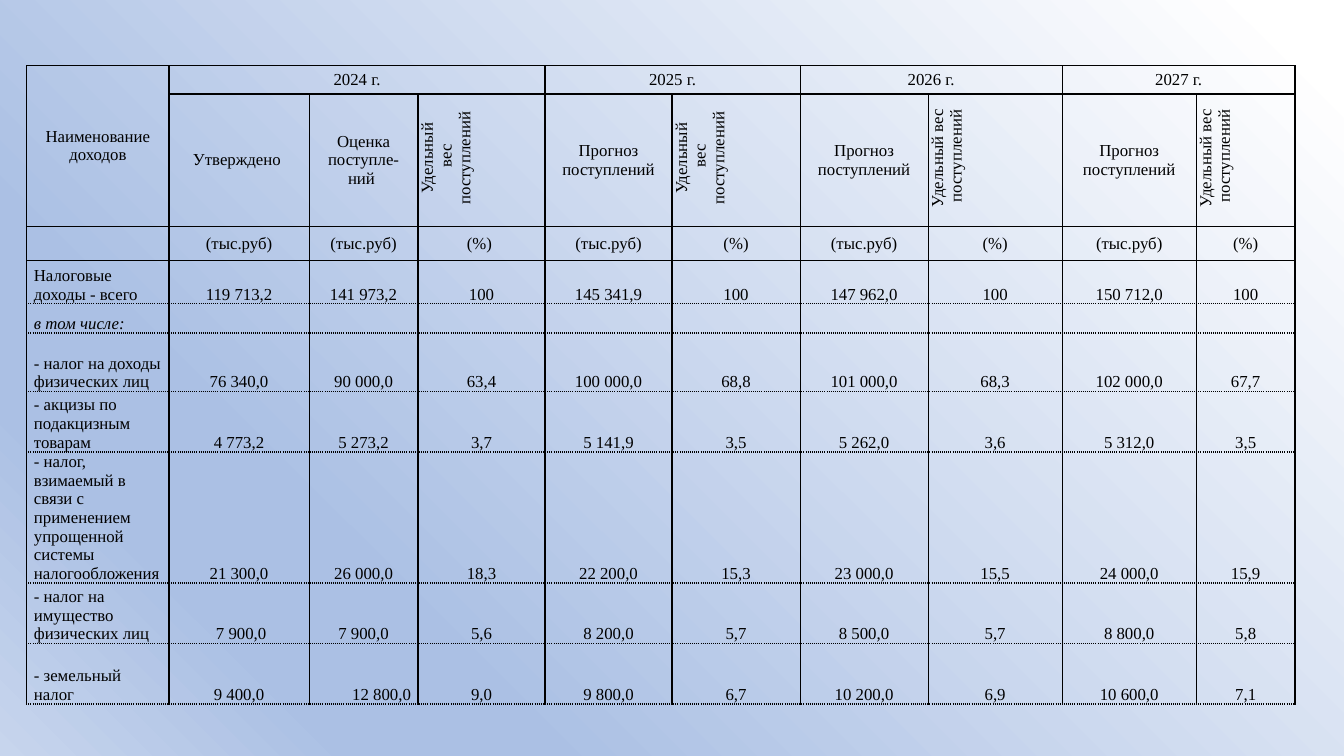
from dataclasses import dataclass, field

import lxml.etree
import pptx
import pptx.dml.color
import pptx.enum.text
import pptx.oxml
import pptx.oxml.ns
import pptx.util

ALIGN = pptx.enum.text.PP_ALIGN
ANCHOR = pptx.enum.text.MSO_ANCHOR
qn = pptx.oxml.ns.qn


@dataclass(frozen=True)
class Theme:
    font: str = "Times New Roman"
    size: float = 12
    text: str = "000000"
    border: str = "000000"
    border_width: float = 1
    backdrop: tuple = ((4, "FFFFFF"), (74, "ABC0E4"), (83, "ABC0E4"), (100, "C7D5ED"))


@dataclass(frozen=True)
class Column:
    width: float
    heading: tuple[str, ...]
    unit: str = "(тыс.руб)"
    vertical: bool = False


@dataclass(frozen=True)
class Year:
    title: str
    columns: list[Column]


@dataclass(frozen=True)
class Income:
    height: float
    label: str
    values: list[str] = field(default_factory=lambda: [""] * 9)
    italic: bool = False


THEME = Theme()
SLIDE_W, SLIDE_H = 13.33, 7.5
TABLE_X, TABLE_Y = 0.02, 0.087
LABEL_WIDTH = 1.41
HEADER_HEIGHTS = [0.28, 0.98, 0.34]
SHORT_WEIGHT = ("Удельный ", "вес поступлений ")
LONG_WEIGHT = ("Удельный вес ", "поступлений")
FORECAST = ("Прогноз поступлений",)

YEARS = [
    Year("2024 г.", [Column(1.39, ("Утверждено ",)),
                     Column(1.08, ("Оценка поступле-ний ",)),
                     Column(1.26, SHORT_WEIGHT, "(%) ", True)]),
    Year("2025 г.", [Column(1.26, FORECAST), Column(1.27, SHORT_WEIGHT, "(%)", True)]),
    Year("2026 г.", [Column(1.27, FORECAST), Column(1.33, LONG_WEIGHT, "(%)", True)]),
    Year("2027 г.", [Column(1.33, FORECAST), Column(0.98, LONG_WEIGHT, "(%)", True)]),
]
INCOMES = [
    Income(0.43, "Налоговые доходы - всего",
           ["119 713,2", "141 973,2", "100", "145 341,9", "100",
            "147 962,0", "100", "150 712,0", "100"]),
    Income(0.29, "в том числе:", italic=True),
    Income(0.58, "- налог на доходы физических лиц",
           ["76 340,0", "90 000,0", "63,4", "100 000,0", "68,8",
            "101 000,0", "68,3", "102 000,0", "67,7"]),
    Income(0.6, "- акцизы по подакцизным товарам",
           ["4 773,2", "5 273,2", "3,7", "5 141,9", "3,5",
            "5 262,0", "3,6", "5 312,0", "3,5"]),
    Income(1.3, "- налог, взимаемый в связи с применением упрощенной системы налогообложения",
           ["21 300,0", "26 000,0", "18,3", "22 200,0", "15,3",
            "23 000,0", "15,5", "24 000,0", "15,9"]),
    Income(0.6, "- налог на имущество физических лиц",
           [" 7 900,0", "7 900,0", "5,6", "8 200,0", "5,7",
            "8 500,0", "5,7", "8 800,0", "5,8"]),
    Income(0.6, "- земельный налог",
           ["9 400,0", "12 800,0", "9,0", "9 800,0", "6,7",
            "10 200,0", "6,9", "10 600,0", "7,1"]),
]


def paint_background(slide) -> None:
    fill = slide.background.fill
    fill.gradient()
    fill.gradient_angle = 225
    stops = next(slide.background._cSld.iter(qn("a:gsLst")))
    for stop in list(stops):
        stops.remove(stop)
    for percent, color in THEME.backdrop:
        stop = lxml.etree.SubElement(stops, qn("a:gs"), pos=str(percent * 1000))
        lxml.etree.SubElement(stop, qn("a:srgbClr"), val=color)


def set_borders(cell, **dashes: str) -> None:
    tc_pr = cell._tc.get_or_add_tcPr()
    for side in "LRTB":
        width = str(pptx.util.Pt(THEME.border_width))
        ln = lxml.etree.SubElement(tc_pr, qn(f"a:ln{side}"), w=width)
        solid = lxml.etree.SubElement(ln, qn("a:solidFill"))
        lxml.etree.SubElement(solid, qn("a:srgbClr"), val=THEME.border)
        lxml.etree.SubElement(ln, qn("a:prstDash"), val=dashes.get(side, "solid"))
    cell.fill.background()


def write(cell, *lines: str, align=ALIGN.CENTER, anchor=ANCHOR.MIDDLE,
          italic: bool = False, vertical: bool = False) -> None:
    cell.margin_left = cell.margin_right = pptx.util.Inches(0.07)
    cell.margin_top = cell.margin_bottom = 0
    cell.vertical_anchor = anchor
    if vertical:
        cell._tc.get_or_add_tcPr().set("vert", "vert270")
    tf = cell.text_frame
    for i, line in enumerate(lines):
        p = tf.add_paragraph() if i else tf.paragraphs[0]
        p.alignment = align
        if vertical:
            p._p.get_or_add_pPr().set("marL", str(pptx.util.Inches(0.08)))
        if not line:
            lxml.etree.SubElement(p._p, qn("a:endParaRPr"), sz=str(THEME.size * 100))
            continue
        r = p.add_run()
        r.text = line
        r.font.name = THEME.font
        r.font.size = pptx.util.Pt(THEME.size)
        r.font.bold = False
        r.font.italic = italic
        r.font.color.rgb = pptx.dml.color.RGBColor.from_string(THEME.text)


def fill_header(table) -> None:
    for row in range(len(HEADER_HEIGHTS)):
        for col in range(len(table.columns)):
            set_borders(table.cell(row, col))
    table.cell(0, 0).merge(table.cell(1, 0))
    write(table.cell(0, 0), "Наименование доходов")
    write(table.cell(2, 0), "")
    first = 1
    for year in YEARS:
        last = first + len(year.columns) - 1
        table.cell(0, first).merge(table.cell(0, last))
        write(table.cell(0, first), year.title)
        for col, column in enumerate(year.columns, first):
            write(table.cell(1, col), *column.heading, vertical=column.vertical)
            write(table.cell(2, col), column.unit)
        first = last + 1


def fill_incomes(table) -> None:
    for row, income in enumerate(INCOMES, len(HEADER_HEIGHTS)):
        top = "solid" if row == len(HEADER_HEIGHTS) else "dot"
        for col, text in enumerate([income.label, *income.values]):
            cell = table.cell(row, col)
            set_borders(cell, T=top, B="dot")
            if col == 0:
                align = ALIGN.LEFT
            elif text == "12 800,0":
                align = ALIGN.RIGHT
            else:
                align = ALIGN.CENTER
            shown = text.replace(" ", chr(160)) if col else text
            write(cell, shown, align=align, anchor=ANCHOR.BOTTOM, italic=income.italic)


def add_income_table(slide) -> None:
    widths = [LABEL_WIDTH] + [c.width for year in YEARS for c in year.columns]
    heights = HEADER_HEIGHTS + [income.height for income in INCOMES]
    inches = pptx.util.Inches
    table = slide.shapes.add_table(
        len(heights), len(widths),
        inches(TABLE_X * SLIDE_W), inches(TABLE_Y * SLIDE_H),
        inches(sum(widths)), inches(sum(heights))).table
    table.first_row = table.horz_banding = False
    for column, width in zip(table.columns, widths):
        column.width = inches(width)
    for row, height in zip(table.rows, heights):
        row.height = inches(height)
    fill_header(table)
    fill_incomes(table)


def main() -> None:
    prs = pptx.Presentation()
    prs.slide_width = pptx.util.Inches(SLIDE_W)
    prs.slide_height = pptx.util.Inches(SLIDE_H)
    slide = prs.slides.add_slide(prs.slide_layouts[6])
    paint_background(slide)
    add_income_table(slide)
    prs.save("out.pptx")


if __name__ == "__main__":
    main()
